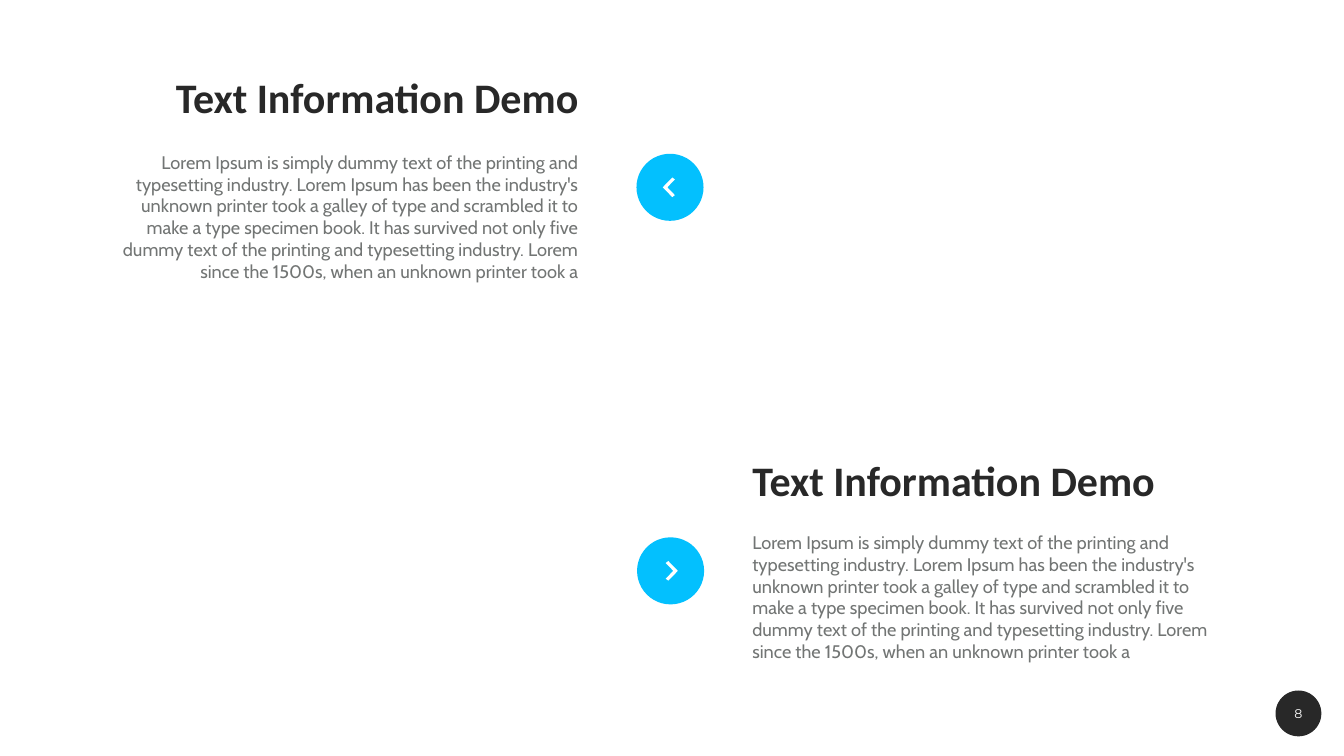
from dataclasses import dataclass

from pptx import Presentation
from pptx.dml.color import RGBColor
from pptx.enum.shapes import MSO_SHAPE
from pptx.enum.text import PP_ALIGN
from pptx.util import Cm, Pt

CIRCLE = MSO_SHAPE.OVAL
LEFT, CENTER, RIGHT = PP_ALIGN.LEFT, PP_ALIGN.CENTER, PP_ALIGN.RIGHT


@dataclass(frozen=True)
class Theme:
    dark: RGBColor = RGBColor(0x28, 0x28, 0x28)
    gray: RGBColor = RGBColor(0x72, 0x75, 0x74)
    accent: RGBColor = RGBColor(0x03, 0xC0, 0xFE)
    white: RGBColor = RGBColor(0xFF, 0xFF, 0xFF)
    title_font: str = "Calibri"
    body_font: str = "Cabin"
    number_font: str = "Montserrat"
    title_size: int = 60
    body_size: int = 26
    number_size: int = 18


THEME = Theme()
HEADING = "Text Information Demo"
BODY = (
    "Lorem Ipsum is simply dummy text of the printing and typesetting industry. "
    "Lorem Ipsum has been the industry's unknown printer took a galley of type "
    "and scrambled it to make a type specimen book. It has survived not only five "
    "dummy text of the printing and typesetting industry. Lorem since the 1500s, "
    "when an unknown printer took a"
)
BODY_WIDTH = 23.32
ARROW_SIZE = 3.38
CHEVRON_WIDTH, CHEVRON_HEIGHT = 0.61, 0.99
CHEVRON_NUDGE = 0.06  # shift of the chevron towards its tip


def paint(shape, color):
    shape.shadow.inherit = False
    shape.fill.solid()
    shape.fill.fore_color.rgb = color
    shape.line.fill.background()


def add_circle(slide, left, top, size, color):
    circle = slide.shapes.add_shape(CIRCLE, Cm(left), Cm(top), Cm(size), Cm(size))
    paint(circle, color)


def add_text(slide, box, text, font, size, color, align, bold=False):
    frame = slide.shapes.add_textbox(*map(Cm, box)).text_frame
    frame.word_wrap = True
    frame.margin_left = frame.margin_right = Cm(0.1)
    frame.margin_top = frame.margin_bottom = Cm(0.1)
    paragraph = frame.paragraphs[0]
    paragraph.text = text
    paragraph.alignment = align
    paragraph.font.name = font
    paragraph.font.size = Pt(size)
    paragraph.font.bold = bold
    paragraph.font.color.rgb = color
    return paragraph


def add_text_block(slide, box, title_size, body_drop, align):
    """Heading over body text, both flush with the aligned side of the box."""
    left, top, width, height = box
    title_width, title_height = title_size

    def flush(part_width):
        return left + width - part_width if align == RIGHT else left

    heading = add_text(
        slide, (flush(title_width), top, title_width, title_height), HEADING,
        THEME.title_font, THEME.title_size, THEME.dark, align, bold=True)
    heading.line_spacing = 0.9
    add_text(
        slide, (flush(BODY_WIDTH), top + body_drop, BODY_WIDTH, height - body_drop),
        BODY, THEME.body_font, THEME.body_size, THEME.gray, align)


def add_arrow_button(slide, left, top, direction):
    """Circle with a chevron; direction is 1 for right and -1 for left."""
    add_circle(slide, left, top, ARROW_SIZE, THEME.accent)
    center_x = left + ARROW_SIZE / 2 + direction * CHEVRON_NUDGE
    center_y = top + ARROW_SIZE / 2
    half_width, half_height = CHEVRON_WIDTH / 2, CHEVRON_HEIGHT / 2
    outline = [
        (0.13, 0), (0, 0.1), (0.38, half_height), (0, CHEVRON_HEIGHT - 0.1),
        (0.13, CHEVRON_HEIGHT), (CHEVRON_WIDTH, half_height),
    ]
    points = [
        (Cm(center_x + direction * (x - half_width)), Cm(center_y + y - half_height))
        for x, y in outline
    ]
    builder = slide.shapes.build_freeform(*points[0])
    builder.add_line_segments(points[1:], close=True)
    paint(builder.convert_to_shape(), THEME.white)


def add_page_number(slide, left, top, size, number):
    add_circle(slide, left, top, size, THEME.dark)
    paragraph = add_text(
        slide, (left + 0.31, top + 0.66, size - 0.62, 0.99), number,
        THEME.number_font, THEME.number_size, THEME.white, CENTER)
    # Letter spacing in hundredths of a point
    paragraph.runs[0]._r.get_or_add_rPr().set("spc", "360")


def main():
    deck = Presentation()
    deck.slide_width, deck.slide_height = Cm(67.74), Cm(38.1)
    slide = deck.slides.add_slide(deck.slide_layouts[6])

    # Page number
    add_page_number(slide, 64.29, 34.8, 2.31, "8")

    # Text blocks: lower right, then upper left
    add_text_block(slide, (37.82, 23.11, 28.37, 13.34), (28.37, 3.38), 3.56, LEFT)
    add_text_block(slide, (5.94, 3.78, BODY_WIDTH, 14.23), (22.83, 4.42), 3.73, RIGHT)

    # Arrow buttons pointing at the text blocks
    add_arrow_button(slide, 32.08, 7.75, -1)
    add_arrow_button(slide, 32.11, 27.08, 1)

    deck.save("out.pptx")


if __name__ == "__main__":
    main()
